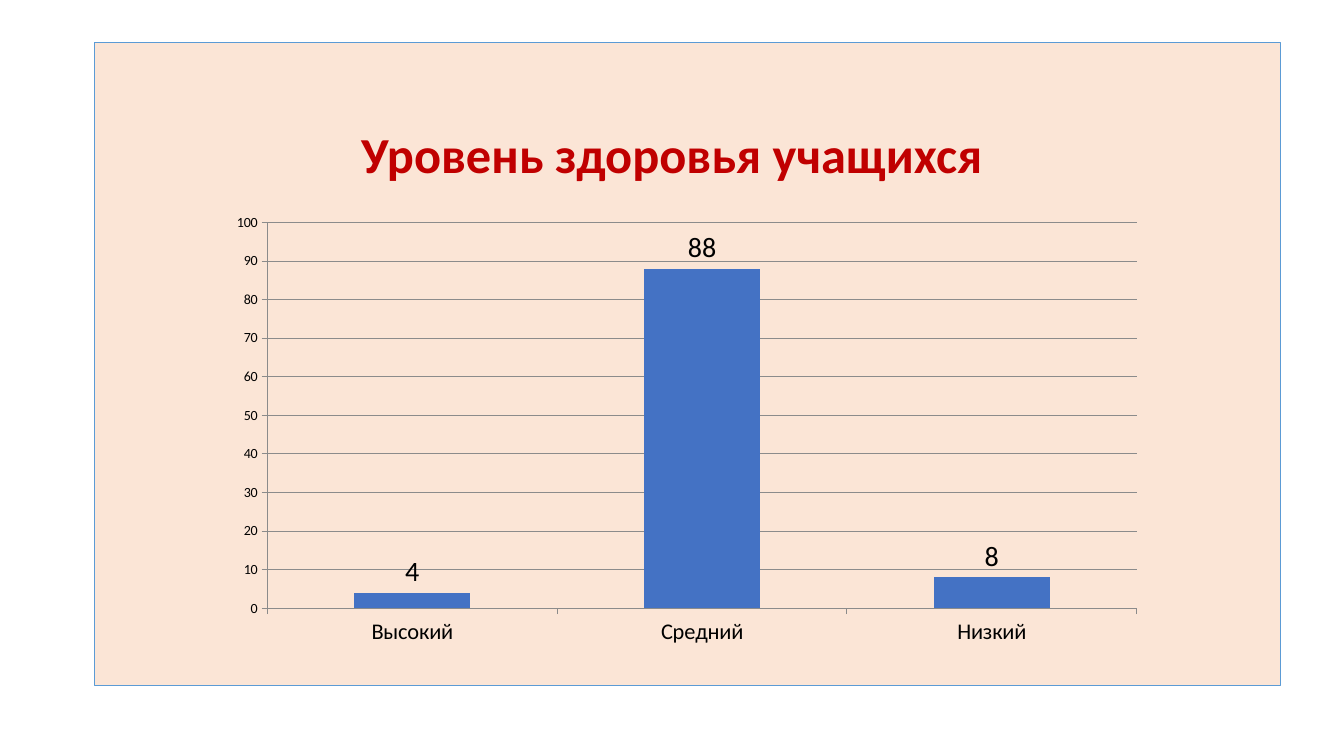
"""Build a slide with a column chart of pupils' health levels."""
import dataclasses

import pptx
import pptx.chart.data
import pptx.dml.color
import pptx.enum.chart
import pptx.enum.shapes
import pptx.enum.text
import pptx.oxml
import pptx.oxml.ns
import pptx.util

Inches = pptx.util.Inches
Pt = pptx.util.Pt

TITLE = "Уровень здоровья учащихся"
SERIES = "Series 1"
LEVELS = {"Высокий": 4, "Средний": 88, "Низкий": 8}

SIZE = (13.33, 7.5)
PANEL = (0.94, 0.42, 11.76, 6.38)
HEAD = (2.29, 0.94, 8.75, 1.17)
CHART = (2.19, 2.03, 9.27, 4.45)
PLOT = (2.67, 2.2, 8.6, 3.82)


@dataclasses.dataclass(frozen=True)
class Theme:
    font: str = "Calibri"
    panel: str = "FBE5D6"
    edge: str = "5B9BD5"
    title: str = "C00000"
    bar: str = "4472C4"
    axis: str = "8B8B8B"
    text: str = "000000"
    head_pt: int = 36
    label_pt: int = 20
    level_pt: int = 16
    scale_pt: int = 10


THEME = Theme()


def color(code):
    return pptx.dml.color.RGBColor.from_string(code)


def box(rect):
    return [Inches(part) for part in rect]


def style(font, size, tint=THEME.text, bold=False):
    font.name = THEME.font
    font.size = Pt(size)
    font.bold = bold
    font.color.rgb = color(tint)


def write(shape, text, size, tint=THEME.text, bold=False):
    frame = shape.text_frame
    frame.word_wrap = True
    frame.auto_size = pptx.enum.text.MSO_AUTO_SIZE.NONE
    frame.vertical_anchor = pptx.enum.text.MSO_ANCHOR.MIDDLE
    para = frame.paragraphs[0]
    para.alignment = pptx.enum.text.PP_ALIGN.CENTER
    run = para.add_run()
    run.text = text
    style(run.font, size, tint, bold)


def add_panel(slide):
    panel = slide.shapes.add_shape(
        pptx.enum.shapes.MSO_SHAPE.RECTANGLE, *box(PANEL))
    panel.shadow.inherit = False
    panel.fill.solid()
    panel.fill.fore_color.rgb = color(THEME.panel)
    panel.line.color.rgb = color(THEME.edge)
    panel.line.width = Pt(0.5)
    slide.shapes.title.element.addprevious(panel.element)


def add_title(slide):
    title = slide.shapes.title
    title.left, title.top, title.width, title.height = box(HEAD)
    write(title, TITLE, THEME.head_pt, THEME.title, bold=True)


def place_plot(chart):
    left, top, wide, high = CHART
    x, y, w, h = PLOT
    parts = {"x": (x - left) / wide, "y": (y - top) / high,
             "w": w / wide, "h": h / high}
    modes = "".join(f'<c:{key}Mode val="edge"/>' for key in "xy")
    sizes = "".join(f'<c:{key} val="{val:.2f}"/>'
                    for key, val in parts.items())
    layout = pptx.oxml.parse_xml(
        f'<c:layout {pptx.oxml.ns.nsdecls("c")}><c:manualLayout>'
        f'<c:layoutTarget val="inner"/>{modes}{sizes}'
        '</c:manualLayout></c:layout>')
    area = chart.element.chart.plotArea
    for old in area.findall(pptx.oxml.ns.qn("c:layout")):
        area.remove(old)
    area.insert(0, layout)


def add_chart(slide):
    data = pptx.chart.data.CategoryChartData()
    data.categories = list(LEVELS)
    data.add_series(SERIES, list(LEVELS.values()))
    kind = pptx.enum.chart.XL_CHART_TYPE.COLUMN_CLUSTERED
    chart = slide.shapes.add_chart(kind, *box(CHART), data).chart
    chart.has_legend = False
    chart.has_title = False
    style(chart.font, THEME.scale_pt)
    place_plot(chart)

    plot = chart.plots[0]
    plot.gap_width = 150
    plot.vary_by_categories = False
    bars = plot.series[0]
    bars.format.fill.solid()
    bars.format.fill.fore_color.rgb = color(THEME.bar)
    labels = bars.data_labels
    labels.show_value = True
    labels.position = pptx.enum.chart.XL_LABEL_POSITION.OUTSIDE_END
    style(labels.font, THEME.label_pt)

    scale = chart.value_axis
    scale.minimum_scale, scale.maximum_scale = 0, 100
    scale.major_unit = 10
    scale.has_major_gridlines = True
    sizes = (THEME.level_pt, THEME.scale_pt)
    for axis, size in zip((chart.category_axis, scale), sizes):
        axis.major_tick_mark = pptx.enum.chart.XL_TICK_MARK.OUTSIDE
        style(axis.tick_labels.font, size)
    for item in (chart.category_axis, scale, scale.major_gridlines):
        item.format.line.color.rgb = color(THEME.axis)
        item.format.line.width = Pt(0.75)


def main():
    deck = pptx.Presentation()
    deck.slide_width, deck.slide_height = box(SIZE)
    slide = deck.slides.add_slide(deck.slide_layouts[5])
    add_panel(slide)
    add_title(slide)
    add_chart(slide)
    deck.save("out.pptx")


if __name__ == "__main__":
    main()
